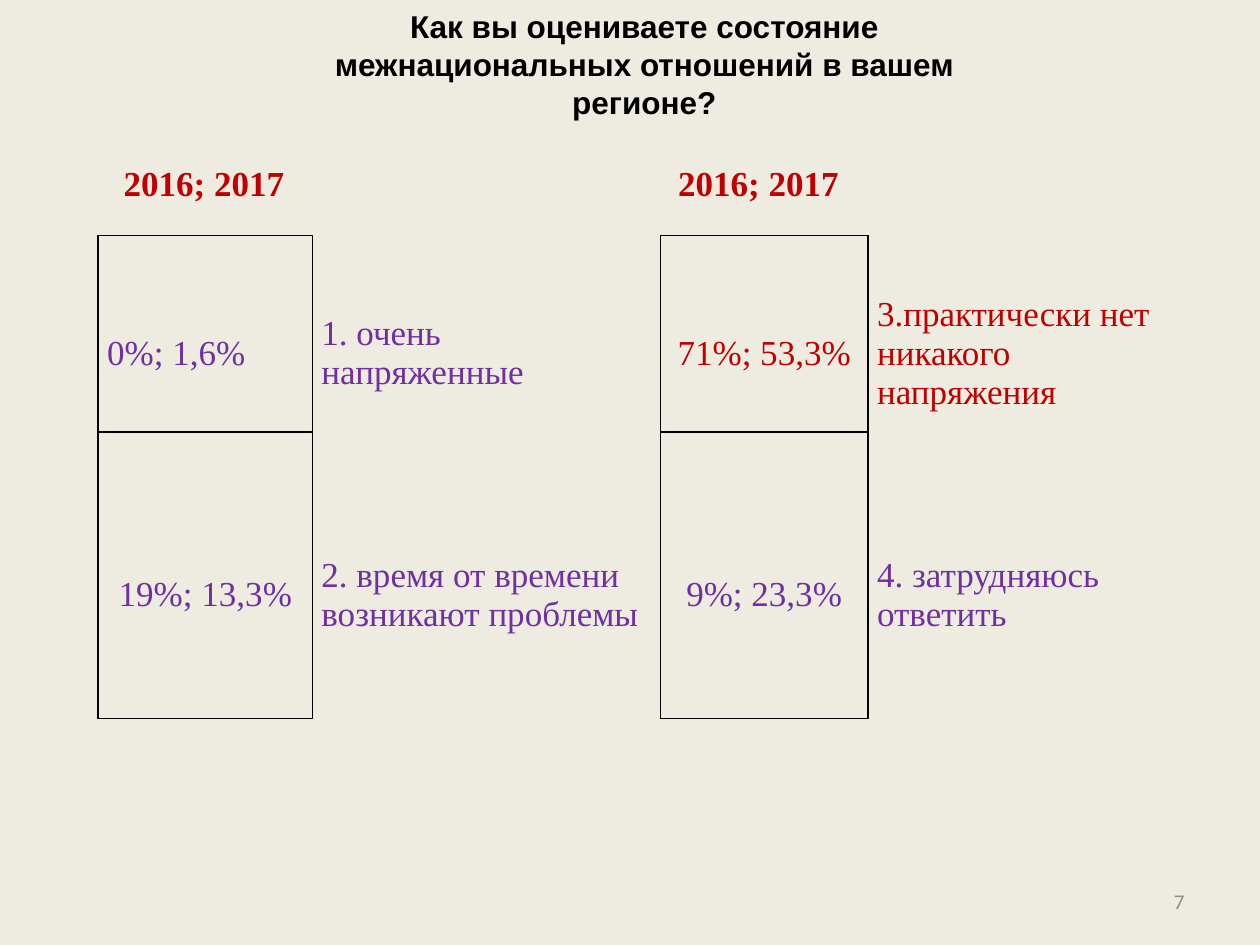
from lxml import etree
from pptx import Presentation
from pptx.dml.color import RGBColor
from pptx.enum import text as t
from pptx.oxml import ns
from pptx.util import Cm, Pt

TITLE = "Как вы оцениваете состояние межнациональных отношений в вашем регионе?"
YEARS = "2016; 2017"
PAGE = "7"

BLACK = RGBColor(0x00, 0x00, 0x00)
GREY = RGBColor(0x8C, 0x8C, 0x8C)
RED = RGBColor(0xC0, 0x00, 0x00)
VIOLET = RGBColor(0x70, 0x30, 0xA0)
CREAM = RGBColor(0xEE, 0xEC, 0xE1)

LEFT, CENTER = t.PP_ALIGN.LEFT, t.PP_ALIGN.CENTER
RIGHT, EVEN = t.PP_ALIGN.RIGHT, t.PP_ALIGN.JUSTIFY
TOP, MIDDLE = t.MSO_ANCHOR.TOP, t.MSO_ANCHOR.MIDDLE
SERIF = "Times New Roman"

# Each cell: text, colour, alignment
ROWS = [
    [("0%; 1,6%", VIOLET, LEFT),
     ("1. очень напряженные", VIOLET, LEFT),
     ("71%; 53,3%", RED, CENTER),
     ("3.практически нет никакого напряжения", RED, LEFT)],
    [("19%; 13,3%", VIOLET, CENTER),
     ("2. время от времени возникают проблемы", VIOLET, LEFT),
     ("9%; 23,3%", VIOLET, CENTER),
     ("4. затрудняюсь ответить", VIOLET, LEFT)],
]
WIDTHS = [4.32, 7.01, 4.19, 5.92]
HEIGHTS = [3.96, 5.77]
BOXED = {0, 2}  # columns with a full frame
HEADS = [(2.31, 4.47), (13.49, 3.89)]  # left, width


def write(frame, words, color, align, size=20, font=SERIF, bold=False):
    frame.text = words
    para = frame.paragraphs[0]
    para.alignment = align
    face = para.runs[0].font
    face.name, face.size, face.bold = font, Pt(size), bold
    face.color.rgb = color


def add_label(slide, box, words, color, align, size, font, bold=False):
    frame = slide.shapes.add_textbox(*map(Cm, box)).text_frame
    frame.word_wrap = True
    frame.vertical_anchor = MIDDLE
    write(frame, words, color, align, size, font, bold)


def add_grid(slide, left, top, widths, heights):
    """Add a plain table without style bands."""
    grid = slide.shapes.add_table(
        len(heights), len(widths), Cm(left), Cm(top),
        Cm(sum(widths)), Cm(sum(heights))).table
    grid.first_row = grid.horz_banding = False
    for col, width in zip(grid.columns, widths):
        col.width = Cm(width)
    for row, height in zip(grid.rows, heights):
        row.height = Cm(height)
    return grid


def style(cell, edges, anchor, top=0):
    """Draw the named edges in black, hide the others and clear the fill."""
    props = cell._tc.get_or_add_tcPr()
    for edge in "LRTB":
        line = etree.SubElement(props, ns.qn("a:ln" + edge), w=str(Pt(1)))
        if edge in edges:
            fill = etree.SubElement(line, ns.qn("a:solidFill"))
            etree.SubElement(fill, ns.qn("a:srgbClr"), val=str(BLACK))
        else:
            etree.SubElement(line, ns.qn("a:noFill"))
    cell.fill.background()
    cell.margin_left = cell.margin_right = Cm(0.18)
    cell.margin_top, cell.margin_bottom = Cm(top), 0
    cell.vertical_anchor = anchor


def main():
    deck = Presentation()
    deck.slide_width, deck.slide_height = Cm(25.4), Cm(19.05)
    slide = deck.slides.add_slide(deck.slide_layouts[6])
    slide.background.fill.solid()
    slide.background.fill.fore_color.rgb = CREAM

    add_label(slide, (18.21, 17.65, 5.92, 1.02), PAGE, GREY, RIGHT, 12, "Calibri")
    add_label(slide, (4.96, 0, 16.06, 2.57), TITLE, BLACK, CENTER, 18, "Arial", True)

    grid = add_grid(slide, 1.98, 4.75, WIDTHS, HEIGHTS)
    for r, row in enumerate(ROWS):
        for c, (words, color, align) in enumerate(row):
            cell = grid.cell(r, c)
            edges = "LRTB" if c in BOXED else "LR" if c + 1 in BOXED else "L"
            style(cell, edges, MIDDLE, top=0.79)
            write(cell.text_frame, words, color, align)

    for left, width in HEADS:
        cell = add_grid(slide, left, 3.33, [width], [1.19]).cell(0, 0)
        style(cell, "", TOP)
        write(cell.text_frame, YEARS, RED, EVEN, bold=True)

    deck.save("out.pptx")


if __name__ == "__main__":
    main()
